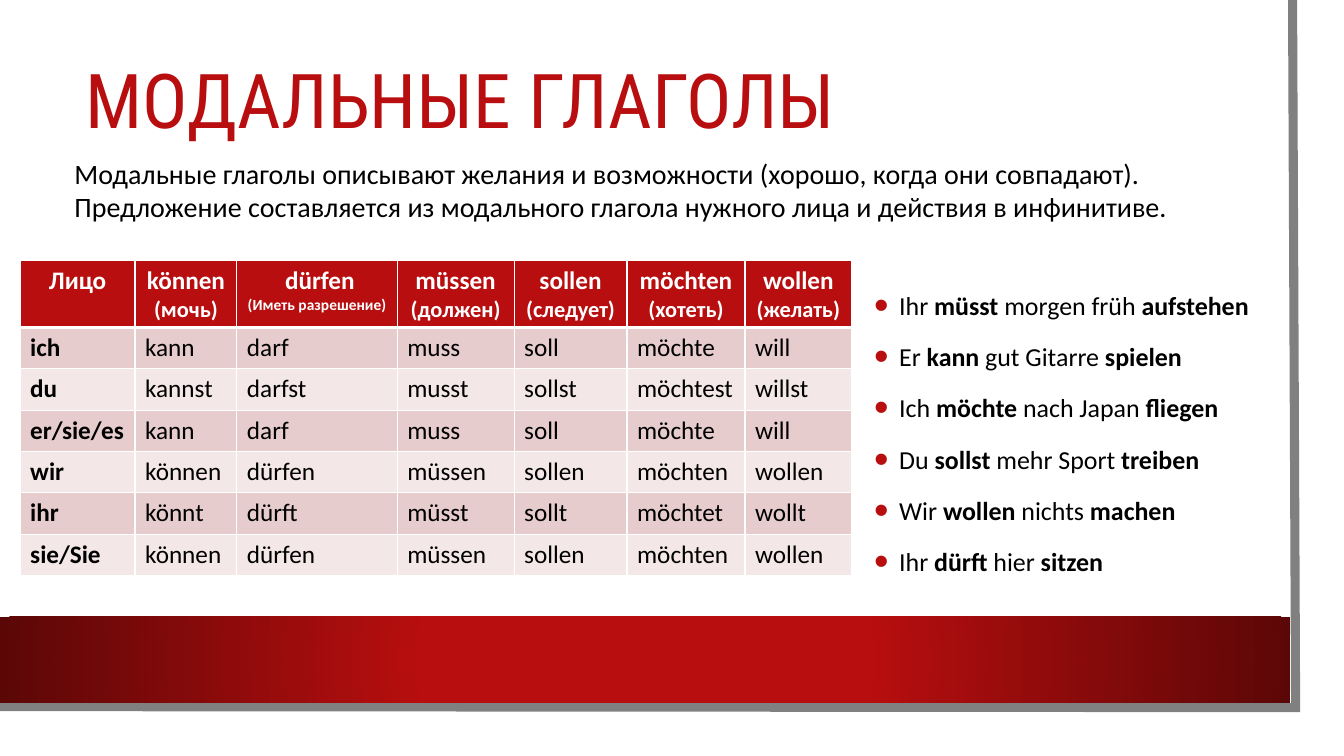
from pptx import Presentation
from pptx.dml.color import RGBColor as RGB
from pptx.enum.shapes import MSO_SHAPE as Shape
from pptx.enum.text import MSO_ANCHOR as Anchor, MSO_AUTO_SIZE as Fit, PP_ALIGN as Align
from pptx.oxml import parse_xml
from pptx.oxml.ns import nsdecls
from pptx.util import Inches, Pt

# Content
TITLE = "МОДАЛЬНЫЕ ГЛАГОЛЫ"
INTRO = [
    "Модальные глаголы описывают желания и возможности (хорошо, когда они совпадают).",
    "Предложение составляется из модального глагола нужного лица и действия в инфинитиве.",
]
# Column heads: verb, meaning, size of the meaning, column width
HEADS = [
    ("Лицо", "", 16, 1.14),
    ("können", "(мочь)", 16, 1.01),
    (" dürfen", "(Иметь разрешение)", 11, 1.59),
    ("müssen", "(должен)", 16, 1.16),
    ("sollen", "(следует)", 16, 1.12),
    ("möchten", "(хотеть)", 16, 1.17),
    ("wollen", "(желать)", 16, 1.06),
]
FORMS = [
    ("ich", "kann", "darf", "muss", "soll", "möchte", "will"),
    ("du", "kannst", "darfst", "musst", "sollst", "möchtest", "willst"),
    ("er/sie/es", "kann", "darf", "muss", "soll", "möchte", "will"),
    ("wir", "können", "dürfen", "müssen", "sollen", "möchten", "wollen"),
    ("ihr", "könnt", "dürft", "müsst", "sollt", "möchtet", "wollt"),
    ("sie/Sie", "können", "dürfen", "müssen", "sollen", "möchten", "wollen"),
]
# Plain and bold runs take turns
SAMPLES = [
    ("Ihr ", "müsst ", "morgen früh ", "aufstehen"),
    ("Er ", "kann", " gut Gitarre ", "spielen"),
    ("Ich ", "möchte", " nach Japan ", "fliegen"),
    ("Du ", "sollst", " mehr Sport ", "treiben"),
    ("Wir ", "wollen ", "nichts ", "machen"),
    ("Ihr ", "dürft ", "hier ", "sitzen"),
]

RED = RGB(0xB8, 0x0E, 0x0F)
DARK = RGB(0x5C, 0x07, 0x07)
GRAY = RGB(0x80, 0x80, 0x80)
BLACK = RGB(0, 0, 0)
WHITE = RGB(0xFF, 0xFF, 0xFF)
BANDS = RGB(0xE6, 0xCC, 0xCC), RGB(0xF3, 0xE7, 0xE7)
FONT, HEAD_FONT, DOT_FONT = "Calibri", "Roboto Condensed", "Arial"
HEAD_ROW, ROW = 0.67, 0.41


def inches(*vals):
    return [Inches(v) for v in vals]


def add_run(para, text, size, color=BLACK, bold=False, face=FONT):
    run = para.add_run()
    run.text = text
    font = run.font
    font.size, font.name, font.bold = Pt(size), face, bold
    font.color.rgb = color


def next_para(frame, i):
    return frame.add_paragraph() if i else frame.paragraphs[0]


def add_box(slide, *place):
    frame = slide.shapes.add_textbox(*inches(*place)).text_frame
    frame.word_wrap = True
    return frame


def add_frame(slide):
    # Grey edge along the right and the bottom
    path = slide.shapes.build_freeform(*inches(12.82, 0))
    path.add_line_segments([inches(12.85, 7.02), inches(0, 7.01)], close=False)
    edge = path.convert_to_shape()
    edge.shadow.inherit = False
    edge.fill.background()
    edge.line.color.rgb = GRAY
    edge.line.width = Pt(6.5)
    edge.line._get_or_add_ln().append(parse_xml(f'<a:miter {nsdecls("a")} lim="800000"/>'))

    # Red band with dark ends
    band = slide.shapes.add_shape(Shape.RECTANGLE, *inches(0, 6.12, 12.8, 0.85))
    band.shadow.inherit = False
    band.line.fill.background()
    band.fill.solid()
    props = band._element.spPr
    stops = "".join(f'<a:gs pos="{pos}000"><a:srgbClr val="{color}"/></a:gs>'
                    for pos, color in ((34, RED), (100, DARK)))
    grad = parse_xml(
        f'<a:gradFill {nsdecls("a")} rotWithShape="1"><a:gsLst>{stops}</a:gsLst>'
        '<a:path path="circle"><a:fillToRect l="50000" t="50000" r="50000" b="50000"/>'
        '</a:path></a:gradFill>')
    props.replace(props.find("{*}solidFill"), grad)


def add_title(slide):
    title = slide.shapes.title
    title.left, title.top, title.width, title.height = inches(0.75, 0.4, 11.37, 1.26)
    frame = title.text_frame
    frame.auto_size = Fit.NONE
    frame.vertical_anchor = Anchor.MIDDLE
    para = frame.paragraphs[0]
    para.alignment, para.line_spacing = Align.LEFT, 0.9
    add_run(para, TITLE, 54, RED, face=HEAD_FONT)


def add_intro(slide):
    frame = add_box(slide, 0.64, 1.5, 11.06, 0.77)
    for i, line in enumerate(INTRO):
        add_run(next_para(frame, i), line, 20)


def style_cell(cell, row, fill):
    # White rules, the one below the head is thicker
    thick = {("B", 0), ("T", 1)}
    props = cell._tc.get_or_add_tcPr()
    for side in "LRTB":
        width = Pt(3 if (side, row) in thick else 1)
        props.append(parse_xml(
            f'<a:ln{side} {nsdecls("a")} w="{width}"><a:solidFill>'
            f'<a:srgbClr val="{WHITE}"/></a:solidFill></a:ln{side}>'))
    cell.fill.solid()
    cell.fill.fore_color.rgb = fill


def add_forms(slide):
    rows, cols = len(FORMS) + 1, len(HEADS)
    width = sum(head[-1] for head in HEADS)
    table = slide.shapes.add_table(
        rows, cols, *inches(0.2, 2.58, width, HEAD_ROW + ROW * len(FORMS))).table
    for r, row in enumerate(table.rows):
        row.height = Inches(ROW if r else HEAD_ROW)

    # Head row
    for c, (verb, sense, size, wide) in enumerate(HEADS):
        table.columns[c].width = Inches(wide)
        cell = table.cell(0, c)
        style_cell(cell, 0, RED)
        lines = [(verb, 18), (sense, size)] if sense else [(verb, 18)]
        for i, (text, pts) in enumerate(lines):
            para = next_para(cell.text_frame, i)
            para.alignment = Align.CENTER
            add_run(para, text, pts, WHITE, True)

    # Verb forms
    for r, forms in enumerate(FORMS, 1):
        for c, form in enumerate(forms):
            cell = table.cell(r, c)
            style_cell(cell, r, BANDS[(r - 1) % 2])
            add_run(cell.text_frame.paragraphs[0], form, 18, bold=c == 0)


def add_samples(slide):
    frame = add_box(slide, 8.57, 2.81, 4.18, 3.29)
    frame.margin_top = 0
    for i, parts in enumerate(SAMPLES):
        para = next_para(frame, i)
        props = para._p.get_or_add_pPr()
        props.set("marL", str(Inches(0.25)))
        props.set("indent", str(-Inches(0.25)))
        for tag in (f'buClr {nsdecls("a")}><a:srgbClr val="{RED}"/></a:buClr',
                    f'buSzPct {nsdecls("a")} val="160000"/',
                    f'buFont {nsdecls("a")} typeface="{DOT_FONT}"/',
                    f'buChar {nsdecls("a")} char="•"/'):
            props.append(parse_xml(f"<a:{tag}>"))
        para.line_spacing = 1.2
        para.space_before = Pt(10 if i else 0)
        for n, part in enumerate(parts):
            add_run(para, part, 18.5, bold=n % 2 == 1)


def main():
    deck = Presentation()
    deck.slide_width, deck.slide_height = inches(13.33, 7.5)
    slide = deck.slides.add_slide(deck.slide_layouts[5])
    add_frame(slide)
    add_title(slide)
    add_samples(slide)
    add_forms(slide)
    add_intro(slide)
    deck.save("out.pptx")


if __name__ == "__main__":
    main()
